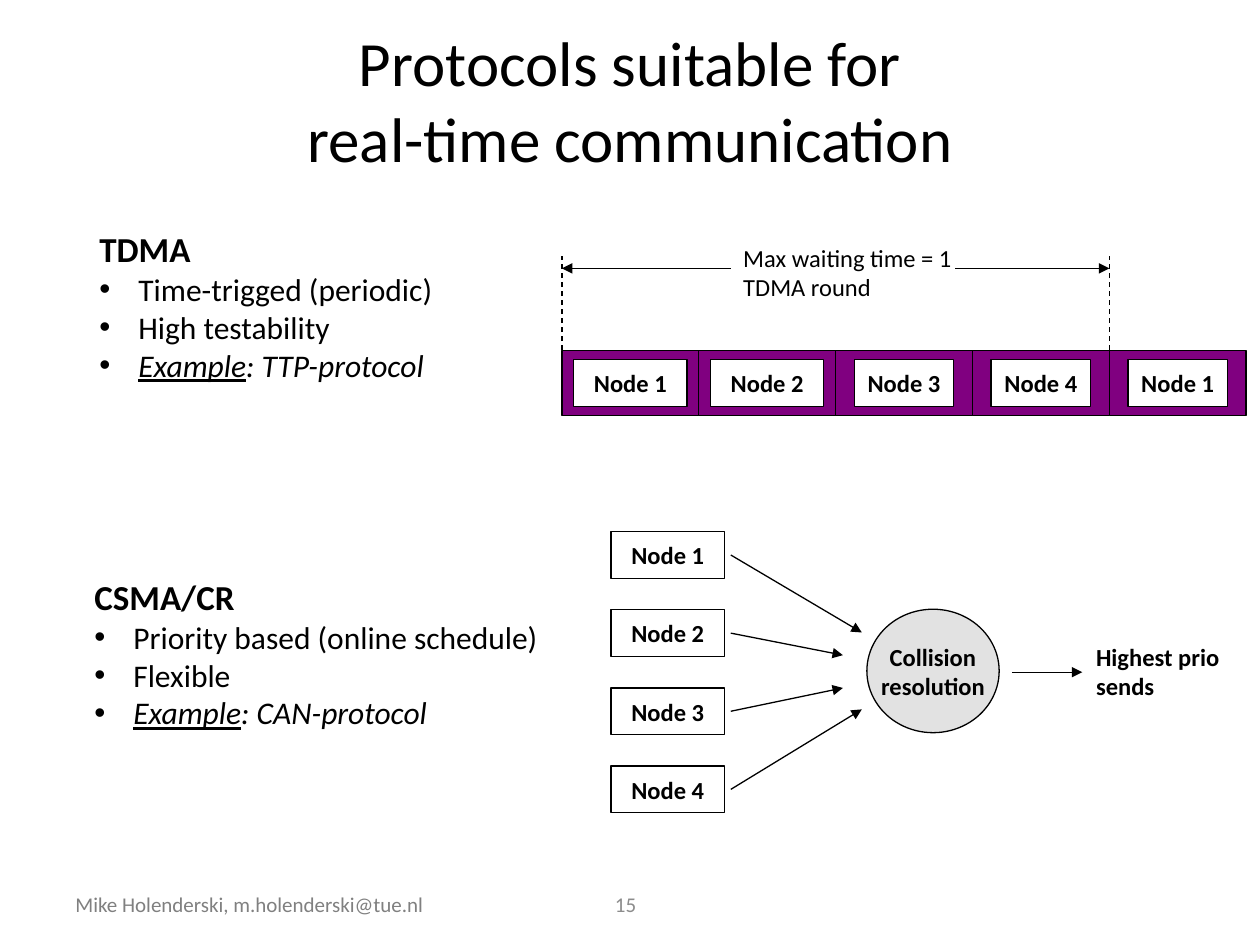
from lxml import etree
from pptx import Presentation
from pptx.dml.color import RGBColor
from pptx.enum.dml import MSO_LINE
from pptx.enum.shapes import MSO_CONNECTOR, MSO_SHAPE
from pptx.enum.text import MSO_ANCHOR, PP_ALIGN
from pptx.oxml.ns import qn
from pptx.util import Inches, Pt

DASH = MSO_LINE.DASH
STRAIGHT = MSO_CONNECTOR.STRAIGHT
RECTANGLE, OVAL = MSO_SHAPE.RECTANGLE, MSO_SHAPE.OVAL
MIDDLE = MSO_ANCHOR.MIDDLE
LEFT, CENTER = PP_ALIGN.LEFT, PP_ALIGN.CENTER

FONT = "Calibri"
BLACK, WHITE, PURPLE, PALE_GRAY = "000000", "FFFFFF", "800080", "E2E2E2"
LINE_WIDTH = 0.75
NODE_HEIGHT = 0.37


def rgb(color):
    return RGBColor.from_string(color)


def format_paragraph(paragraph, size, color=BLACK, bold=False, align=LEFT):
    paragraph.alignment = align
    font = paragraph.font
    font.name, font.size, font.bold = FONT, Pt(size), bold
    font.color.rgb = rgb(color)


def add_label(slide, text, left, top, width, height, size=14, **style):
    box = slide.shapes.add_textbox(
        Inches(left), Inches(top), Inches(width), Inches(height))
    frame = box.text_frame
    frame.word_wrap = True
    frame.text = text
    format_paragraph(frame.paragraphs[0], size, **style)


def add_block(slide, kind, left, top, width, height, fill, text=""):
    """Add an outlined shape, with bold centred text if any is given."""
    shape = slide.shapes.add_shape(
        kind, Inches(left), Inches(top), Inches(width), Inches(height))
    shape.shadow.inherit = False
    shape.fill.solid()
    shape.fill.fore_color.rgb = rgb(fill)
    shape.line.color.rgb = rgb(BLACK)
    shape.line.width = Pt(LINE_WIDTH)
    if text:
        frame = shape.text_frame
        frame.word_wrap = False
        frame.vertical_anchor = MIDDLE
        frame.text = text
        for paragraph in frame.paragraphs:
            format_paragraph(paragraph, 14, bold=True, align=CENTER)


def add_line(slide, start_x, start_y, end_x, end_y, arrow=True):
    """Add a solid arrow, or a dashed line without a head."""
    connector = slide.shapes.add_connector(
        STRAIGHT, Inches(start_x), Inches(start_y), Inches(end_x), Inches(end_y))
    connector.line.color.rgb = rgb(BLACK)
    connector.line.width = Pt(LINE_WIDTH)
    if arrow:
        line = connector.line._get_or_add_ln()
        etree.SubElement(line, qn("a:tailEnd"), type="triangle")
    else:
        connector.line.dash_style = DASH
    etree.SubElement(connector._element.spPr, qn("a:effectLst"))


def add_title(slide, left, top, width, height):
    title = slide.shapes.title
    title.left, title.top = Inches(left), Inches(top)
    title.width, title.height = Inches(width), Inches(height)
    title.text_frame.vertical_anchor = MIDDLE
    title.text_frame.text = "Protocols suitable for\vreal-time communication"
    format_paragraph(title.text_frame.paragraphs[0], 36, align=CENTER)


def add_bullet(paragraph, indent):
    properties = paragraph._p.get_or_add_pPr()
    properties.set("marL", str(Inches(indent)))
    properties.set("indent", str(-Inches(indent)))
    etree.SubElement(properties, qn("a:buFont"), typeface="Arial")
    etree.SubElement(properties, qn("a:buChar"), char="•")


def add_protocol_summary(slide, left, top, width, height, name, features, example):
    box = slide.shapes.add_textbox(
        Inches(left), Inches(top), Inches(width), Inches(height))
    frame = box.text_frame
    frame.word_wrap = True
    frame.text = name
    format_paragraph(frame.paragraphs[0], 20, bold=True)
    for feature in features + [None]:
        paragraph = frame.add_paragraph()
        add_bullet(paragraph, 0.31)
        format_paragraph(paragraph, 18)
        if feature:
            paragraph.add_run().text = feature
        else:
            paragraph.font.italic = True
            label = paragraph.add_run()
            label.text = "Example"
            label.font.underline = True
            paragraph.add_run().text = f": {example}"


def add_tdma_timeline(slide, left, top, width, height):
    nodes = ["Node 1", "Node 2", "Node 3", "Node 4", "Node 1"]
    slot_width, slot_height = width / len(nodes), 0.52
    slot_top = top + height - slot_height
    for index, node in enumerate(nodes):
        slot_left = left + index * slot_width
        add_block(slide, RECTANGLE, slot_left, slot_top, slot_width,
                  slot_height, PURPLE)
        node_width = 0.9 if index < 2 else 0.79
        add_block(slide, RECTANGLE, slot_left + (slot_width - node_width) / 2,
                  slot_top + (slot_height - NODE_HEIGHT) / 2,
                  node_width, NODE_HEIGHT, WHITE, node)

    round_end = left + 4 * slot_width
    for x in (left, round_end):
        add_line(slide, x, slot_top, x, top + 0.15, arrow=False)
    add_label(slide, "Max waiting time = 1 TDMA round",
              left + 1.34, top, 1.92, 0.57)
    arrow_y = top + 0.25
    add_line(slide, left + 1.34, arrow_y, left, arrow_y)
    add_line(slide, left + 3.12, arrow_y, round_end, arrow_y)


def add_collision_diagram(slide, left, top, width, height):
    node_width = 0.9
    pitch = (height - NODE_HEIGHT) / 3
    arrow_ends = [(1.99, 0.8), (1.84, 0.98), (1.84, 1.24), (1.99, 1.41)]
    for index, (end_x, end_y) in enumerate(arrow_ends):
        node_top = top + index * pitch
        add_block(slide, RECTANGLE, left, node_top, node_width, NODE_HEIGHT,
                  WHITE, f"Node {index + 1}")
        add_line(slide, left + node_width + 0.05, node_top + NODE_HEIGHT / 2,
                 left + end_x, top + end_y)

    middle = top + height / 2
    add_block(slide, OVAL, left + 2.03, middle - 0.5, 1.05, 0.98, PALE_GRAY,
              "Collision\nresolution")
    add_line(slide, left + 3.18, middle, left + 3.74, middle)
    add_label(slide, "Highest prio sends", left + 3.75, middle - 0.29,
              width - 3.75, 0.57, bold=True)


def add_footer(slide, left, top, width, height):
    add_label(slide, "Mike Holenderski, m.holenderski@tue.nl",
              left, top, 3.92, height, 12, color="808080")
    add_label(slide, "15", left + width - 1.09, top, 1.09, height, 12,
              color="8C8C8C", align=CENTER)


def main():
    presentation = Presentation()
    presentation.slide_width, presentation.slide_height = Inches(10), Inches(7.5)
    slide = presentation.slides.add_slide(presentation.slide_layouts[5])
    add_title(slide, 0.5, 0.3, 9, 0.98)
    add_protocol_summary(slide, 0.69, 1.76, 3.77, 1.72, "TDMA",
                         ["Time-trigged (periodic)", "High testability"],
                         "TTP-protocol")
    add_tdma_timeline(slide, 4.46, 1.88, 5.43, 1.42)
    add_protocol_summary(slide, 0.65, 4.52, 3.82, 1.35, "CSMA/CR",
                         ["Priority based (online schedule)", "Flexible"],
                         "CAN-protocol")
    add_collision_diagram(slide, 4.85, 4.22, 5.03, 2.23)
    add_footer(slide, 0.5, 7.03, 5.01, 0.3)
    presentation.save("out.pptx")


if __name__ == "__main__":
    main()
